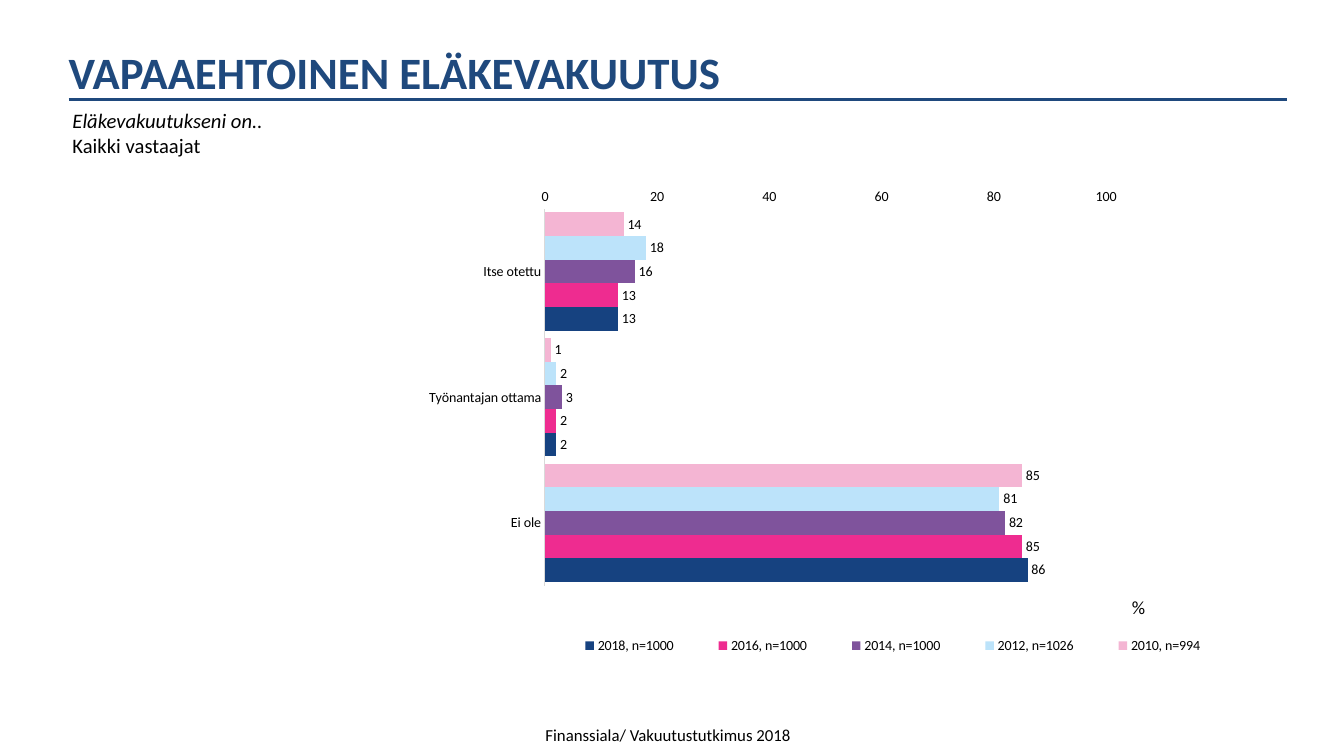
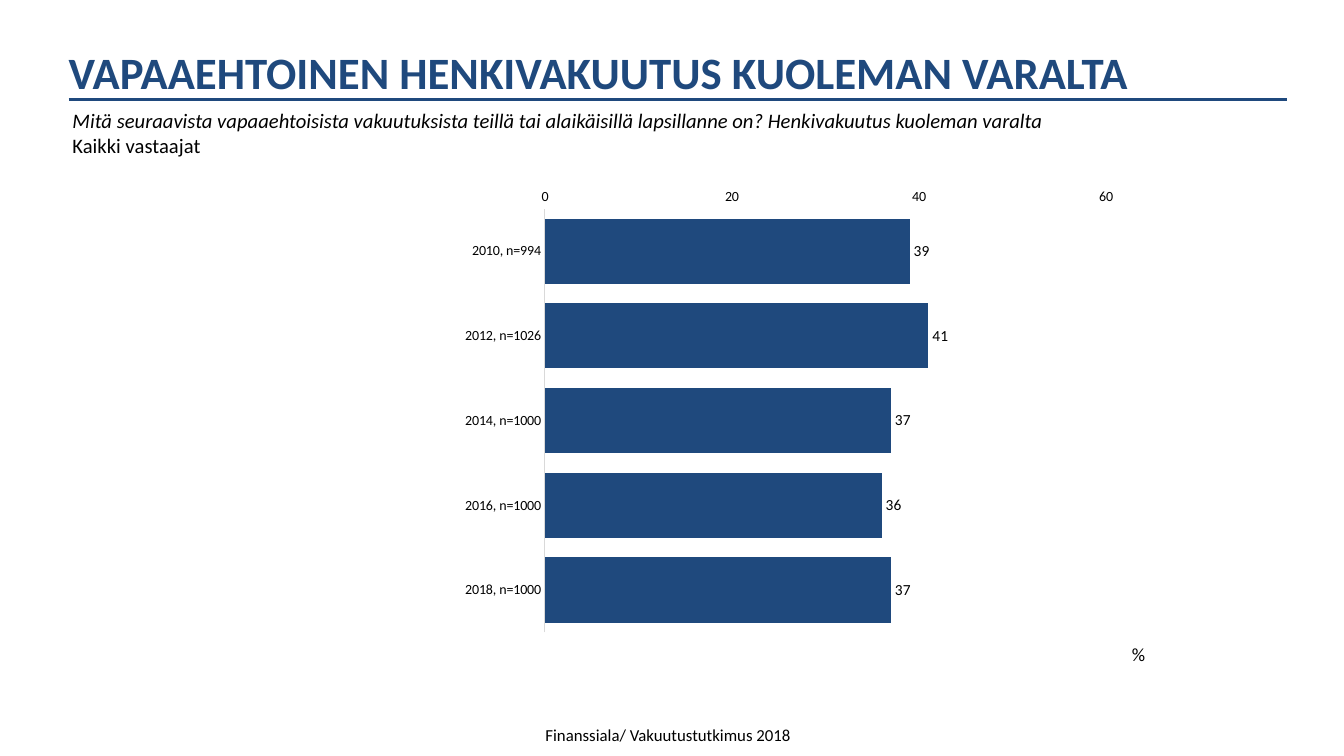
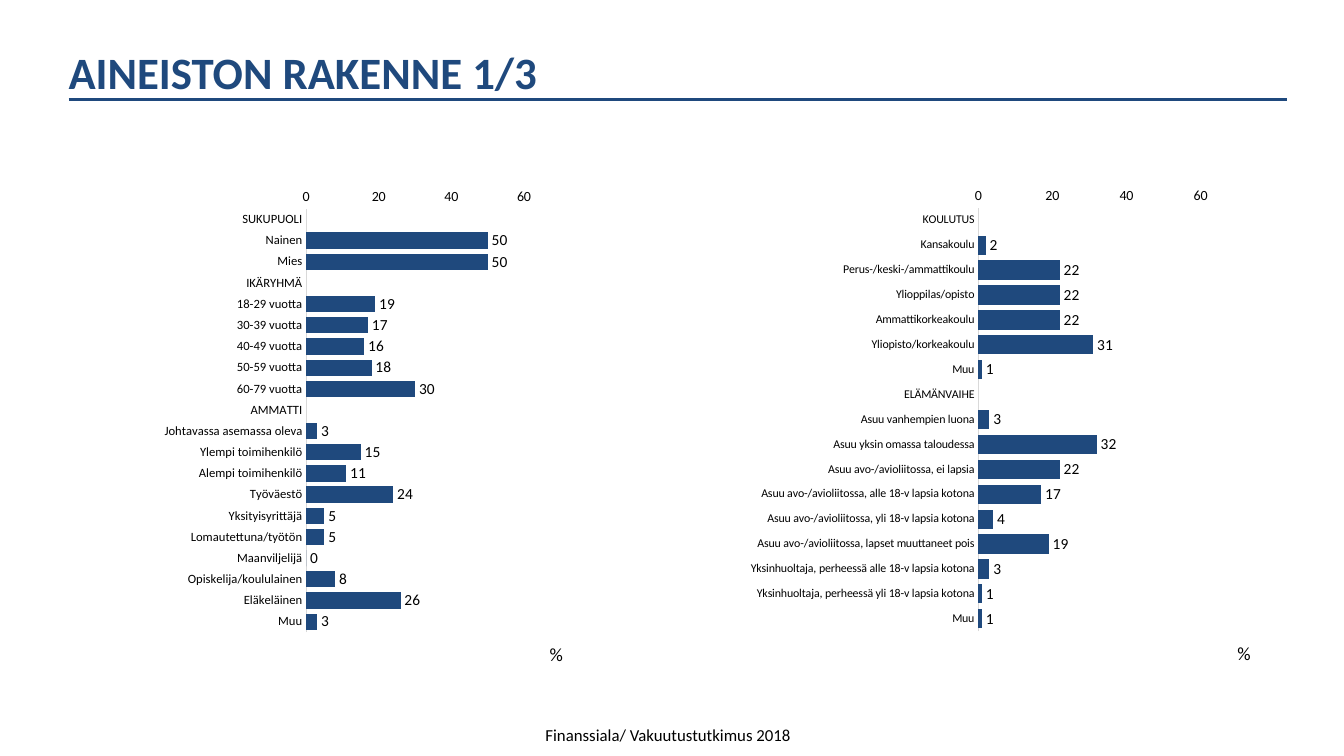
from lxml import etree
from pptx import Presentation
from pptx.chart.data import CategoryChartData
from pptx.dml.color import RGBColor
from pptx.enum.chart import (XL_AXIS_CROSSES as Crosses, XL_CHART_TYPE as ChartType,
                             XL_LABEL_POSITION as LabelPos, XL_LEGEND_POSITION as LegendPos,
                             XL_TICK_MARK as Tick)
from pptx.enum.shapes import MSO_CONNECTOR
from pptx.enum.text import MSO_ANCHOR, MSO_AUTO_SIZE, PP_ALIGN
from pptx.oxml import parse_xml
from pptx.oxml.ns import nsdecls, qn
from pptx.util import Inches, Pt

NAVY = RGBColor(0x1F, 0x49, 0x7D)
BLACK = RGBColor(0x00, 0x00, 0x00)
GREY = RGBColor(0xD9, 0xD9, 0xD9)
ROSE = RGBColor(0xF4, 0xB5, 0xD3)
SKY = RGBColor(0xBC, 0xE3, 0xFA)
VIOLET = RGBColor(0x7F, 0x53, 0x9C)
MAGENTA = RGBColor(0xEE, 0x2C, 0x90)
DEEP_BLUE = RGBColor(0x16, 0x42, 0x80)
FONT = "Calibri"
FOOTER = "Finanssiala/ Vakuutustutkimus 2018"

W, H = 13.33, 7.5
MARGIN = 0.58
RULE_Y = 0.99
WIDE = (0.92, 1.77, 11.5, 4.88)
LEFT = (MARGIN, 1.77, 6.3, 4.88)
RIGHT = (6.35, 1.76, 6.72, 4.88)
PLOT_TOP, PLOT_HEIGHT = 0.062, 0.861

YEARS = ["2010, n=994", "2012, n=1026", "2014, n=1000", "2016, n=1000", "2018, n=1000"]
YEAR_COLORS = [ROSE, SKY, VIOLET, MAGENTA, DEEP_BLUE]
PENSION = {"Itse otettu": (14, 18, 16, 13, 13),
           "Työnantajan ottama": (1, 2, 3, 2, 2),
           "Ei ole": (85, 81, 82, 85, 86)}
LIFE = dict(zip(YEARS, (39, 41, 37, 36, 37)))
BACKGROUND = [
    ("SUKUPUOLI", None), ("Nainen", 50), ("Mies", 50),
    ("IKÄRYHMÄ", None), ("18-29 vuotta", 19), ("30-39 vuotta", 17),
    ("40-49 vuotta", 16), ("50-59 vuotta", 18), ("60-79 vuotta", 30),
    ("AMMATTI", None), ("Johtavassa asemassa oleva", 3), ("Ylempi toimihenkilö", 15),
    ("Alempi toimihenkilö", 11), ("Työväestö", 24), ("Yksityisyrittäjä", 5),
    ("Lomautettuna/työtön", 5), ("Maanviljelijä", 0), ("Opiskelija/koululainen", 8),
    ("Eläkeläinen", 26), ("Muu", 3)]
EDUCATION_AND_LIFE_STAGE = [
    ("KOULUTUS", None), ("Kansakoulu", 2), ("Perus-/keski-/ammattikoulu", 22),
    ("Ylioppilas/opisto", 22), ("Ammattikorkeakoulu", 22), ("Yliopisto/korkeakoulu", 31),
    ("Muu", 1),
    ("ELÄMÄNVAIHE", None), ("Asuu vanhempien luona", 3),
    ("Asuu yksin omassa taloudessa", 32), ("Asuu avo-/avioliitossa, ei lapsia", 22),
    ("Asuu avo-/avioliitossa, alle 18-v lapsia kotona", 17),
    ("Asuu avo-/avioliitossa, yli 18-v lapsia kotona", 4),
    ("Asuu avo-/avioliitossa, lapset muuttaneet pois", 19),
    ("Yksinhuoltaja, perheessä alle 18-v lapsia kotona", 3),
    ("Yksinhuoltaja, perheessä yli 18-v lapsia kotona", 1), ("Muu", 1)]


def inches(box):
    return [Inches(v) for v in box]


def set_font(font, size, color=BLACK, bold=False, italic=False):
    font.name, font.size = FONT, Pt(size)
    font.color.rgb = color
    font.bold, font.italic = bold, italic


def write(p, text, align=PP_ALIGN.LEFT, **fmt):
    p.alignment = align
    r = p.add_run()
    r.text = text
    set_font(r.font, **fmt)


def add_text(s, box, text, wrap=True, insets=(0.1, 0.05), **fmt):
    tf = s.shapes.add_textbox(*inches(box)).text_frame
    tf.word_wrap = wrap
    tf.margin_left = tf.margin_right = Inches(insets[0])
    tf.margin_top = tf.margin_bottom = Inches(insets[1])
    write(tf.paragraphs[0], text, **fmt)
    return tf


def add_slide(prs, title):
    """Add a slide with the shared title, rule and footer."""
    s = prs.slides.add_slide(prs.slide_layouts.get_by_name("Title Only"))
    sp = s.shapes.title
    sp.left, sp.top, sp.width, sp.height = inches((MARGIN, 0.39, W * 0.89, 0.64))
    tf = sp.text_frame
    tf.auto_size = MSO_AUTO_SIZE.NONE
    tf.vertical_anchor = MSO_ANCHOR.TOP
    write(tf.paragraphs[0], title, size=32, color=NAVY, bold=True)

    rule = s.shapes.add_connector(MSO_CONNECTOR.STRAIGHT,
                                  *inches((MARGIN + 0.1, RULE_Y, W - MARGIN + 0.01, RULE_Y)))
    rule.line.color.rgb, rule.line.width = NAVY, Pt(2.25)
    etree.SubElement(rule._element.spPr, qn("a:effectLst"))

    add_text(s, (5.25, 7.11, 2.78, 0.36), FOOTER, wrap=False, insets=(0.16, 0.08), size=12)
    return s


def add_question(s, question):
    tf = add_text(s, (0.62, 1.02, W * 0.91, 0.59), question, size=14.7, italic=True)
    write(tf.add_paragraph(), "Kaikki vastaajat", size=14.7)


def manual_layout(x, y, w, h, inner=False):
    target = '<c:layoutTarget val="inner"/>' if inner else ""
    modes = '<c:xMode val="edge"/><c:yMode val="edge"/>'
    sizes = "".join(f'<c:{k} val="{v}"/>' for k, v in zip("xywh", (x, y, w, h)))
    return parse_xml(f'<c:layout {nsdecls("c")}><c:manualLayout>{target}{modes}{sizes}'
                     '</c:manualLayout></c:layout>')


def set_layout(parent, layout, index):
    for old in parent.findall(qn("c:layout")):
        parent.remove(old)
    parent.insert(index, layout)


def style_axes(chart, top, cat_size):
    cat, val = chart.category_axis, chart.value_axis
    cat.reverse_order = True
    cat.crosses = Crosses.MAXIMUM
    cat.format.line.color.rgb, cat.format.line.width = GREY, Pt(0.75)
    val.minimum_scale, val.maximum_scale, val.major_unit = 0, top, 20
    val.format.line.fill.background()
    val.tick_labels.number_format = "#,##0"
    val.tick_labels.number_format_is_linked = False
    for axis, size in ((cat, cat_size), (val, 10)):
        axis.has_major_gridlines = False
        axis.major_tick_mark = axis.minor_tick_mark = Tick.NONE
        set_font(axis.tick_labels.font, size)


def add_legend(chart, box):
    chart.has_legend = True
    legend = chart.legend
    legend.position, legend.include_in_layout = LegendPos.BOTTOM, False
    set_font(legend.font, 10)
    set_layout(legend._element, manual_layout(*box), 1)


def add_bars(s, box, cats, series, plot_x, plot_w, plot_h=PLOT_HEIGHT, top=60,
             cat_size=10, label_size=11, unit_gap=0.11):
    """Place a bar chart in box, with its % sign beside the end of the value axis.

    series holds (name, values, color); the plot lengths are shares of the box.
    """
    data = CategoryChartData()
    data.categories = cats
    for name, values, _ in series:
        data.add_series(name, values)
    chart = s.shapes.add_chart(ChartType.BAR_CLUSTERED, *inches(box), data).chart
    chart.has_title = chart.has_legend = False
    set_font(chart.font, 10)
    style_axes(chart, top, cat_size)
    plot_area = chart._chartSpace.chart.plotArea
    set_layout(plot_area, manual_layout(plot_x, PLOT_TOP, plot_w, plot_h, inner=True), 0)

    plot = chart.plots[0]
    plot.gap_width, plot.vary_by_categories = 30, False
    for ser, (_, _, color) in zip(plot.series, series):
        ser.format.fill.solid()
        ser.format.fill.fore_color.rgb = color
        labels = ser.data_labels
        labels.show_value, labels.position = True, LabelPos.OUTSIDE_END
        set_font(labels.font, label_size)

    x, y, w, h = box
    add_text(s, (x + w * (plot_x + plot_w) + unit_gap, y + h * (PLOT_TOP + plot_h) + 0.05,
                 0.42, 0.33), "%", align=PP_ALIGN.CENTER, size=13.3)
    return chart


def pension_slide(prs):
    s = add_slide(prs, "VAPAAEHTOINEN ELÄKEVAKUUTUS")
    add_question(s, "Eläkevakuutukseni on..")
    series = list(zip(YEARS, zip(*PENSION.values()), YEAR_COLORS))
    chart = add_bars(s, WIDE, list(PENSION), series, 0.39, 0.484, plot_h=0.766,
                     top=100, label_size=10)
    add_legend(chart, (0.39, 0.915, 0.6, 0.07))


def life_slide(prs):
    s = add_slide(prs, "VAPAAEHTOINEN HENKIVAKUUTUS KUOLEMAN VARALTA")
    add_question(s, "Mitä seuraavista vapaaehtoisista vakuutuksista teillä tai alaikäisillä "
                    "lapsillanne on? Henkivakuutus kuoleman varalta")
    add_bars(s, WIDE, list(LIFE), [("Series 1", LIFE.values(), NAVY)], 0.39, 0.484)


def sample_slide(prs):
    s = add_slide(prs, "AINEISTON RAKENNE 1/3")
    for box, rows, fmt in (
            (LEFT, BACKGROUND, dict(plot_x=0.39, plot_w=0.343, cat_size=9)),
            (RIGHT, EDUCATION_AND_LIFE_STAGE,
             dict(plot_x=0.499, plot_w=0.328, cat_size=8.5, unit_gap=0.22))):
        cats, values = zip(*rows)
        add_bars(s, box, cats, [("Series 1", values, NAVY)], **fmt)


def main():
    prs = Presentation()
    prs.slide_width, prs.slide_height = Inches(W), Inches(H)
    pension_slide(prs)
    life_slide(prs)
    sample_slide(prs)
    prs.save("out.pptx")


if __name__ == "__main__":
    main()
